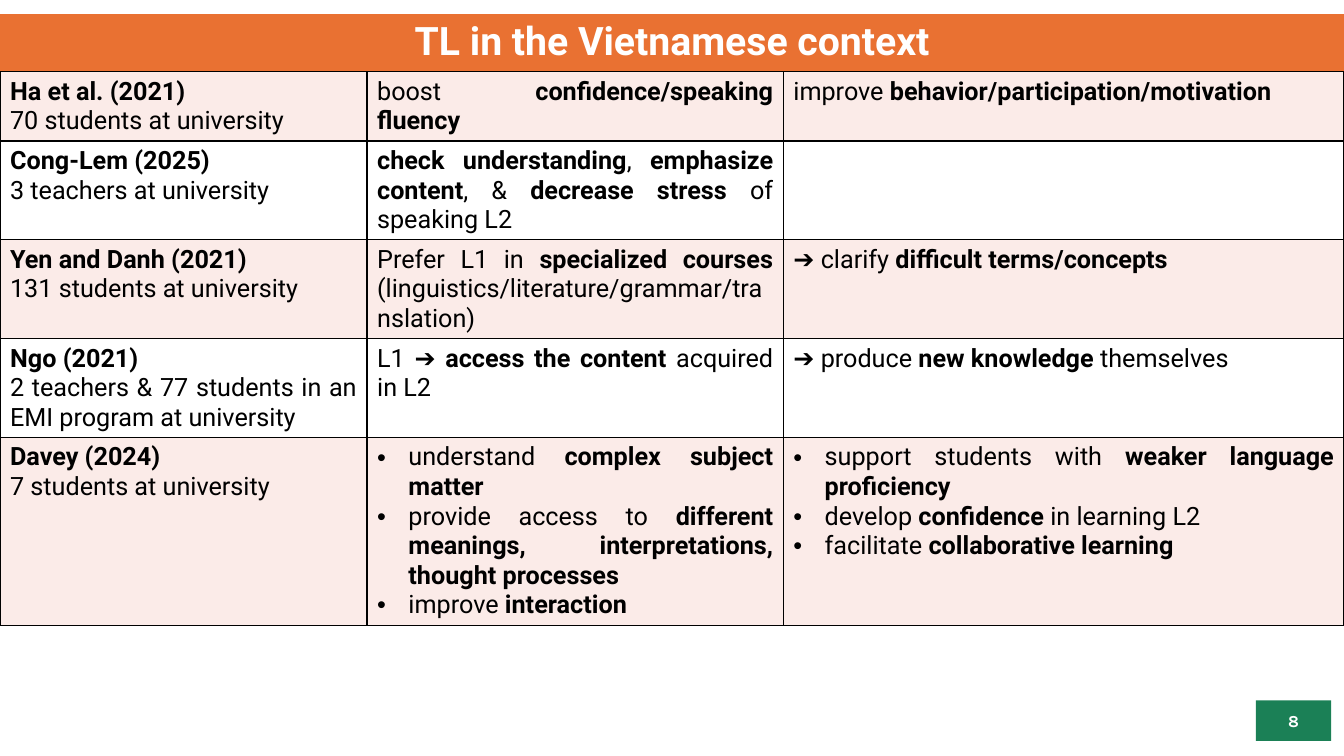
from dataclasses import dataclass

from lxml.etree import SubElement
from pptx import Presentation
from pptx.dml.color import RGBColor
from pptx.enum.shapes import MSO_SHAPE
from pptx.enum.text import MSO_ANCHOR, PP_ALIGN
from pptx.oxml import parse_xml
from pptx.oxml.ns import nsdecls, qn
from pptx.table import _Cell
from pptx.text.text import TextFrame, _Paragraph
from pptx.util import Cm, Pt

BLACK = RGBColor(0x00, 0x00, 0x00)
WHITE = RGBColor(0xFF, 0xFF, 0xFF)
ORANGE = RGBColor(0xE9, 0x71, 0x32)
PINK = RGBColor(0xFB, 0xEB, 0xE8)
GREEN = RGBColor(0x1B, 0x80, 0x56)

TITLE_FORMAT = {"name": "Roboto", "size": Pt(28), "bold": True}
BODY_FORMAT = {"name": "Roboto", "size": Pt(18)}
NUMBER_FORMAT = {"name": "Karla", "size": Pt(12), "bold": True}

COLUMN_WIDTHS = (9.25, 10.49, 14.13)
TITLE_HEIGHT = 1.44
BULLET_INDENT = Cm(0.79)


@dataclass
class Study:
    height: float
    authors: str
    sample: str
    findings: list[str]
    effects: list[str]
    bulleted: bool = False
    effects_align: PP_ALIGN = PP_ALIGN.JUSTIFY


STUDIES = [
    Study(1.74, "Ha et al. (2021)", "70 students at university",
          ["boost **confidence/speaking fluency**"],
          ["improve **behavior/participation/motivation**"],
          effects_align=PP_ALIGN.LEFT),
    Study(2.49, "Cong-Lem (2025)", "3 teachers at university",
          ["**check understanding**, **emphasize content**, & "
           "**decrease stress** of speaking L2"],
          []),
    Study(2.49, "Yen and Danh (2021)", "131 students at university",
          ["Prefer L1 in **specialized courses **"
           "(linguistics/literature/grammar/translation)"],
          ["➔ clarify **difficult terms/concepts**"]),
    Study(2.49, "Ngo (2021)",
          "2 teachers & 77 students in an EMI program at university",
          ["L1 ➔ **access the content **acquired in L2"],
          ["➔ produce **new knowledge **themselves"]),
    Study(4.74, "Davey (2024)", "7 students at university",
          ["understand **complex subject matter**",
           "provide access to **different meanings, interpretations, "
           "thought processes**",
           "improve **interaction**"],
          ["support students with **weaker language proficiency**",
           "develop** confidence **in learning L2",
           "facilitate **collaborative learning**"],
          bulleted=True),
]


def add_run(p: _Paragraph, text: str, color: RGBColor, formats: dict) -> None:
    r = p.add_run()
    r.text = text
    for name, value in formats.items():
        setattr(r.font, name, value)
    r.font.color.rgb = color


def add_bullet(p: _Paragraph) -> None:
    pPr = p._p.get_or_add_pPr()
    pPr.set("marL", str(BULLET_INDENT))
    pPr.set("indent", str(-BULLET_INDENT))
    SubElement(pPr, qn("a:buFont")).set("typeface", "Arial")
    SubElement(pPr, qn("a:buChar")).set("char", "•")


def write_lines(tf: TextFrame, lines: list[str], align: PP_ALIGN,
                bulleted: bool = False) -> None:
    for i, line in enumerate(lines):
        p = tf.add_paragraph() if i else tf.paragraphs[0]
        p.alignment = align
        if bulleted:
            add_bullet(p)
        for j, part in enumerate(line.split("**")):
            if part:
                add_run(p, part, BLACK, BODY_FORMAT | {"bold": j % 2 == 1})


def style_cell(cell: _Cell, fill: RGBColor, edge: RGBColor = BLACK) -> None:
    cell.fill.solid()
    cell.fill.fore_color.rgb = fill
    tcPr = cell._tc.get_or_add_tcPr()
    borders = {"lnL": edge, "lnR": edge, "lnT": edge, "lnB": BLACK}
    for i, (tag, color) in enumerate(borders.items()):
        tcPr.insert(i, parse_xml(
            f'<a:{tag} {nsdecls("a")} w="12700"><a:solidFill>'
            f'<a:srgbClr val="{color}"/></a:solidFill></a:{tag}>'))


def add_studies_table(s) -> None:
    heights = [TITLE_HEIGHT] + [study.height for study in STUDIES]
    table = s.shapes.add_table(
        len(heights), len(COLUMN_WIDTHS), Cm(0), Cm(0.37),
        Cm(sum(COLUMN_WIDTHS)), Cm(sum(heights))).table
    table.first_row = False
    table.horz_banding = False
    for column, width in zip(table.columns, COLUMN_WIDTHS):
        column.width = Cm(width)
    for row, height in zip(table.rows, heights):
        row.height = Cm(height)

    title = table.cell(0, 0)
    title.merge(table.cell(0, len(COLUMN_WIDTHS) - 1))
    for cell in table.rows[0].cells:
        style_cell(cell, ORANGE, ORANGE)
    p = title.text_frame.paragraphs[0]
    p.alignment = PP_ALIGN.CENTER
    add_run(p, "TL in the Vietnamese context", WHITE, TITLE_FORMAT)

    for i, study in enumerate(STUDIES):
        cells = list(table.rows[i + 1].cells)
        for cell in cells:
            style_cell(cell, WHITE if i % 2 else PINK)
        source, findings, effects = (cell.text_frame for cell in cells)
        write_lines(source, [f"**{study.authors}**", study.sample], PP_ALIGN.JUSTIFY)
        write_lines(findings, study.findings, PP_ALIGN.JUSTIFY, study.bulleted)
        write_lines(effects, study.effects, study.effects_align, study.bulleted)


def add_page_number(s, number: str) -> None:
    sp = s.shapes.add_shape(MSO_SHAPE.RECTANGLE, Cm(31.65), Cm(17.65), Cm(1.9), Cm(1.02))
    sp.shadow.inherit = False
    sp.fill.solid()
    sp.fill.fore_color.rgb = GREEN
    sp.line.fill.background()
    tf = sp.text_frame
    tf.vertical_anchor = MSO_ANCHOR.MIDDLE
    p = tf.paragraphs[0]
    p.alignment = PP_ALIGN.CENTER
    add_run(p, number, WHITE, NUMBER_FORMAT)


def main() -> None:
    prs = Presentation()
    prs.slide_width = Cm(33.87)
    prs.slide_height = Cm(19.05)
    s = prs.slides.add_slide(prs.slide_layouts[6])
    add_page_number(s, "8")
    add_studies_table(s)
    prs.save("out.pptx")


if __name__ == "__main__":
    main()
